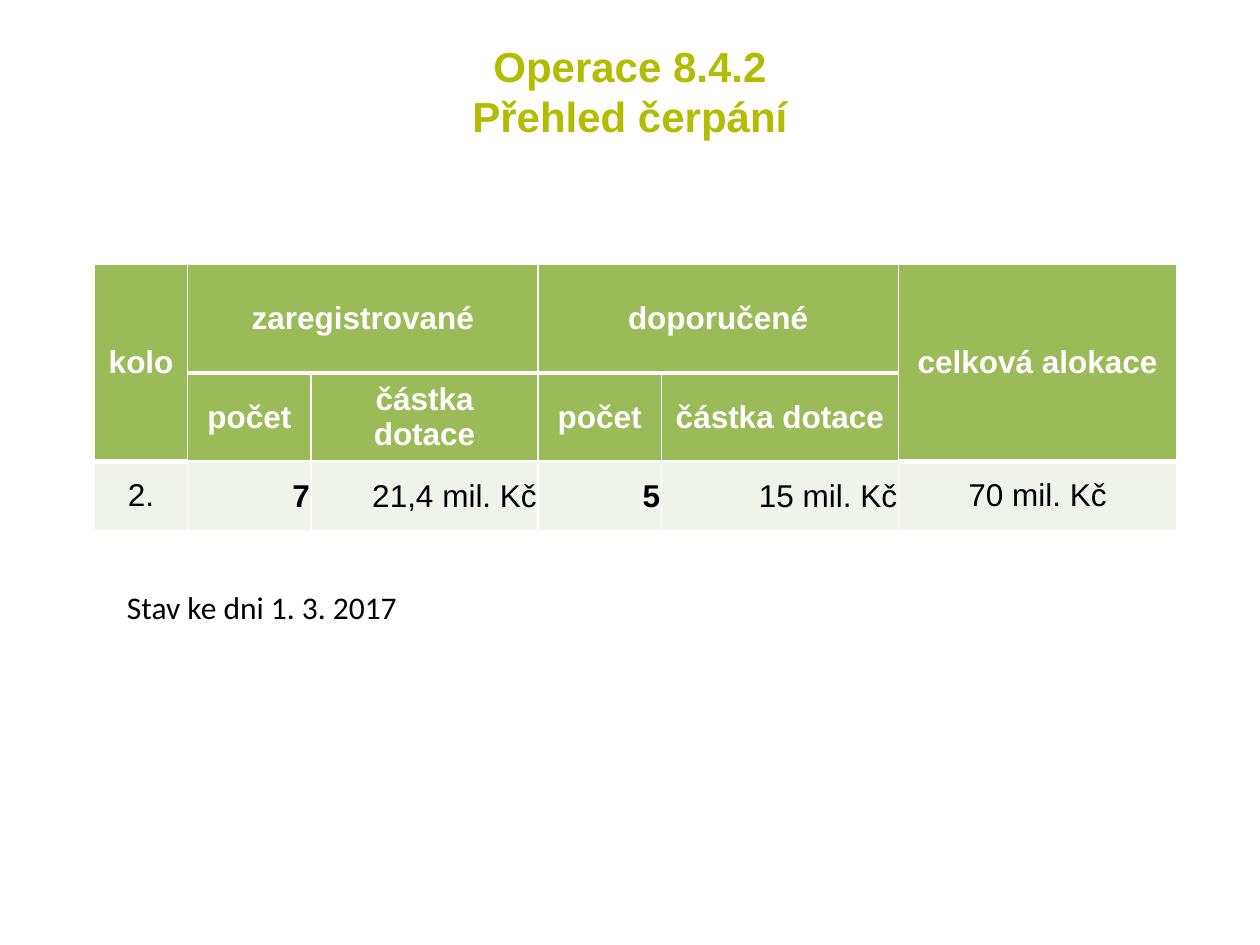
from pptx import Presentation
from pptx.dml.color import RGBColor
from pptx.enum.text import MSO_ANCHOR, PP_ALIGN
from pptx.oxml.ns import qn
from pptx.util import Inches, Pt
from lxml import etree

MIDDLE, TOP = MSO_ANCHOR.MIDDLE, MSO_ANCHOR.TOP
LEFT, CENTER, RIGHT = PP_ALIGN.LEFT, PP_ALIGN.CENTER, PP_ALIGN.RIGHT

WHITE, BLACK = "FFFFFF", "000000"
LIME, GREEN, PALE = "B2BC00", "9BBB59", "EFF3EA"

COLUMN_WIDTHS = [0.74, 0.98, 1.8, 0.98, 1.88, 2.21]
ROW_HEIGHTS = [0.86, 0.65, 0.55]
ROWS = [
    ["kolo", "zaregistrované", "", "doporučené", "", "celková alokace"],
    ["", "počet", "částka dotace", "počet", "částka dotace", ""],
    ["2.", "7", "21,4 mil. Kč", "5", "15 mil. Kč", "70 mil. Kč"],
]
MERGES = [((0, 0), (1, 0)), ((0, 1), (0, 2)), ((0, 3), (0, 4)), ((0, 5), (1, 5))]
HEADER_ROWS = 2
COUNT_COLUMNS = (1, 3)
LAST_COLUMN = len(COLUMN_WIDTHS) - 1

WIDE_MARGINS = (0.1, 0.05, 0.1, 0.05)
NUMBER_MARGINS = (0.01, 0.01, 0.01, 0)
TOTAL_MARGINS = (0.05, 0, 0.05, 0)


def color(value):
    return RGBColor.from_string(value)


def format_text(frame, align, size, name, tint, bold=False):
    for para in frame.paragraphs:
        para.alignment = align
        for span in para.runs:
            span.font.size = Pt(size)
            span.font.name = name
            span.font.bold = bold
            span.font.color.rgb = color(tint)


def add_text(page, box, text, anchor, align, size, name, tint, bold=False):
    frame = page.shapes.add_textbox(*map(Inches, box)).text_frame
    frame.word_wrap = True
    frame.vertical_anchor = anchor
    frame.text = text
    format_text(frame, align, size, name, tint, bold)


def set_borders(cell, bottom_width):
    properties = cell._tc.get_or_add_tcPr()
    for side, width in (("L", 1), ("R", 1), ("T", 1), ("B", bottom_width)):
        line = etree.SubElement(properties, qn(f"a:ln{side}"), w=str(Pt(width)))
        fill = etree.SubElement(line, qn("a:solidFill"))
        etree.SubElement(fill, qn("a:srgbClr"), val=WHITE)


def set_margins(cell, margins):
    (cell.margin_left, cell.margin_top,
     cell.margin_right, cell.margin_bottom) = map(Inches, margins)


def style_cell(cell, row, column):
    header = row < HEADER_ROWS
    align, margins = CENTER, WIDE_MARGINS
    if not header and column == LAST_COLUMN:
        margins = TOTAL_MARGINS
    elif not header and column > 0:
        align, margins = RIGHT, NUMBER_MARGINS

    set_borders(cell, 3 if row == 0 else 1)
    cell.fill.solid()
    cell.fill.fore_color.rgb = color(GREEN if header else PALE)
    cell.vertical_anchor = MIDDLE
    set_margins(cell, margins)
    format_text(cell.text_frame, align, 18, "Arial",
                WHITE if header else BLACK, header or column in COUNT_COLUMNS)


def add_funding_table(page, left, top):
    box = (left, top, sum(COLUMN_WIDTHS), sum(ROW_HEIGHTS))
    table = page.shapes.add_table(
        len(ROW_HEIGHTS), len(COLUMN_WIDTHS), *map(Inches, box)).table
    table.horz_banding = False
    for column, width in zip(table.columns, COLUMN_WIDTHS):
        column.width = Inches(width)
    for row, height in zip(table.rows, ROW_HEIGHTS):
        row.height = Inches(height)
    for start, end in MERGES:
        table.cell(*start).merge(table.cell(*end))
    for row, texts in enumerate(ROWS):
        for column, text in enumerate(texts):
            cell = table.cell(row, column)
            if text:
                cell.text = text
            style_cell(cell, row, column)


def main():
    deck = Presentation()
    deck.slide_width, deck.slide_height = Inches(10), Inches(7.5)
    page = deck.slides.add_slide(deck.slide_layouts[6])
    add_text(page, (0.67, 0.13, 8.66, 1.18), "Operace 8.4.2\vPřehled čerpání",
             MIDDLE, CENTER, 24, "Arial", LIME, bold=True)
    add_funding_table(page, 0.75, 2.1)
    add_text(page, (0.91, 4.62, 2.6, 0.4), "Stav ke dni 1. 3. 2017",
             TOP, LEFT, 18, "Calibri", BLACK)
    deck.save("out.pptx")


if __name__ == "__main__":
    main()
